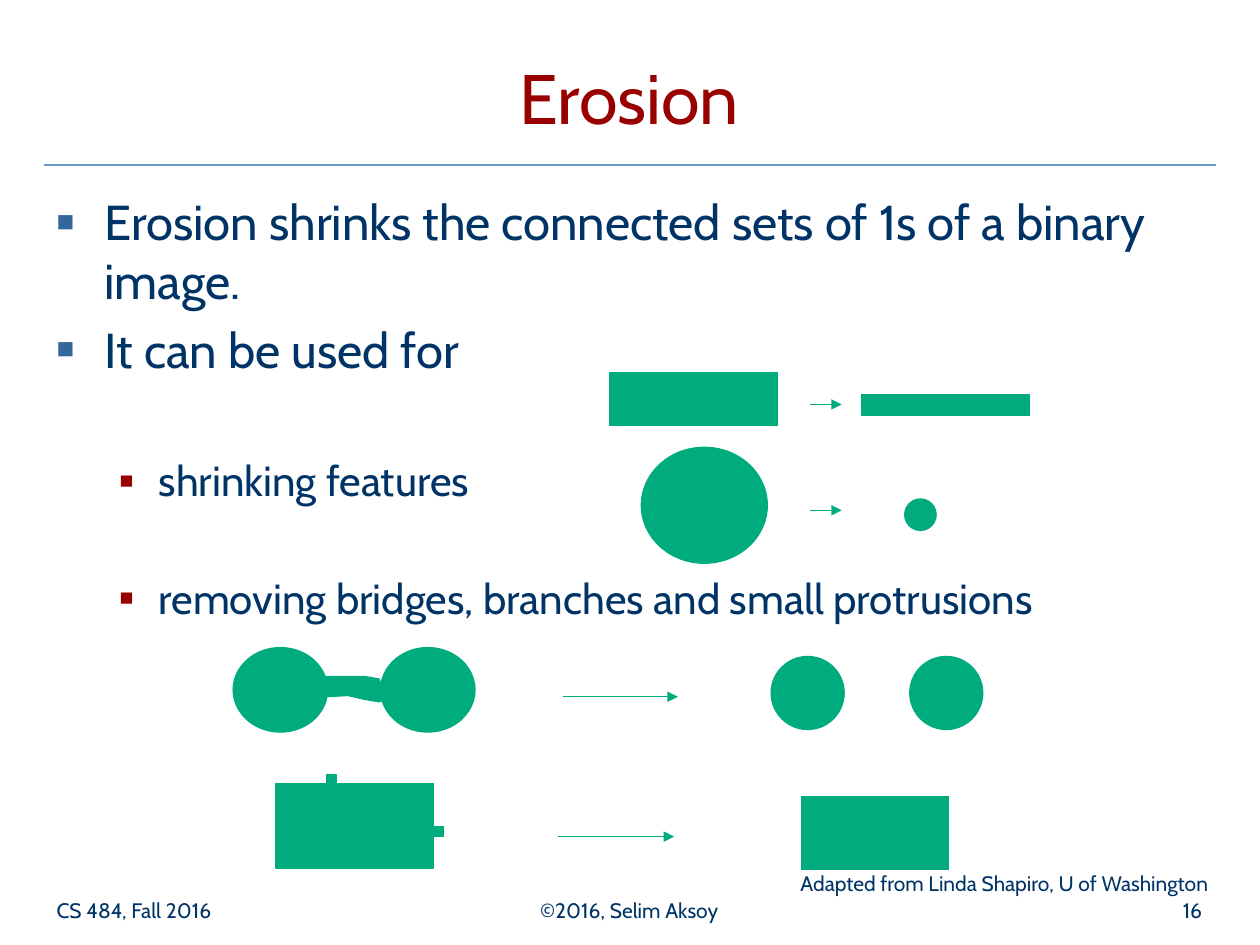
from dataclasses import dataclass

from lxml import etree
from pptx import Presentation
from pptx.dml.color import RGBColor
from pptx.enum.shapes import MSO_CONNECTOR, MSO_SHAPE
from pptx.enum.text import MSO_ANCHOR, MSO_AUTO_SIZE, PP_ALIGN
from pptx.oxml.ns import qn
from pptx.util import Pt

PX = 9144
FONT = "Cabin"
COLORS = {
    "text": "003366",
    "title": "990000",
    "bullet": "336699",
    "sub_bullet": "990000",
    "rule": "6699CC",
    "figure": "00AB7E",
}
RECT, ELLIPSE = MSO_SHAPE.RECTANGLE, MSO_SHAPE.OVAL
STRAIGHT = MSO_CONNECTOR.STRAIGHT
LEFT, CENTER, RIGHT = PP_ALIGN.LEFT, PP_ALIGN.CENTER, PP_ALIGN.RIGHT
TOP, BOTTOM = MSO_ANCHOR.TOP, MSO_ANCHOR.BOTTOM
NO_FIT = MSO_AUTO_SIZE.NONE


@dataclass
class Box:
    left: int
    top: int
    width: int
    height: int

    def emu(self) -> tuple[int, int, int, int]:
        return self.left * PX, self.top * PX, self.width * PX, self.height * PX


@dataclass
class Figure:
    preset: MSO_SHAPE
    box: Box


@dataclass
class Arrow:
    left: int
    y: int
    length: int


@dataclass
class Caption:
    text: str
    box: Box
    align: PP_ALIGN
    anchor: MSO_ANCHOR


@dataclass
class Bullet:
    text: str
    level: int
    before: float


@dataclass
class BulletStyle:
    size: int
    margin: int
    hang: int
    color: str
    percent: int


BULLET_STYLES = [
    BulletStyle(28, 38, 38, "bullet", 60),
    BulletStyle(24, 81, 31, "sub_bullet", 55),
]
BULLETS = [
    Bullet("Erosion shrinks the connected sets of 1s of a binary image.", 0, 0),
    Bullet("It can be used for", 0, 5.6),
    Bullet("shrinking features", 1, 44),
    Bullet("removing bridges, branches and small protrusions", 1, 38.5),
]
CAPTIONS = [
    Caption("CS 484, Fall 2016", Box(35, 702, 208, 35), LEFT, BOTTOM),
    Caption("©2016, Selim Aksoy", Box(341, 702, 317, 35), CENTER, BOTTOM),
    Caption("16", Box(756, 702, 208, 35), RIGHT, BOTTOM),
    Caption("Adapted from Linda Shapiro, U of Washington",
            Box(594, 686, 375, 30), RIGHT, TOP),
]
FIGURES = [
    Figure(RECT, Box(484, 296, 133, 42)),
    Figure(RECT, Box(684, 313, 133, 17)),
    Figure(ELLIPSE, Box(509, 355, 100, 92)),
    Figure(ELLIPSE, Box(718, 396, 25, 25)),
    Figure(ELLIPSE, Box(185, 514, 75, 67)),
    Figure(ELLIPSE, Box(302, 514, 75, 67)),
    Figure(ELLIPSE, Box(612, 521, 58, 58)),
    Figure(ELLIPSE, Box(722, 521, 58, 58)),
    Figure(RECT, Box(219, 622, 125, 67)),
    Figure(RECT, Box(344, 656, 8, 8)),
    Figure(RECT, Box(259, 615, 8, 8)),
    Figure(RECT, Box(636, 632, 117, 58)),
]
ARROWS = [Arrow(643, 321, 25), Arrow(643, 405, 25),
          Arrow(447, 553, 91), Arrow(443, 664, 92)]
BRIDGE = [(249, 537), (275, 537), (290, 537), (301, 539), (303, 546), (304, 556),
          (301, 557), (289, 555), (276, 552), (259, 553), (252, 555), (252, 547)]


def rgb(name: str) -> RGBColor:
    return RGBColor.from_string(COLORS[name])


def add_run(paragraph, text: str, size: int, color: str) -> None:
    run = paragraph.add_run()
    run.text = text
    run.font.name = FONT
    run.font.size = Pt(size)
    run.font.color.rgb = rgb(color)


def place(shape, box: Box) -> None:
    shape.left, shape.top, shape.width, shape.height = box.emu()


def set_frame(shape, anchor: MSO_ANCHOR):
    frame = shape.text_frame
    frame.word_wrap = True
    frame.auto_size = NO_FIT
    frame.vertical_anchor = anchor
    return frame


def set_bullet(paragraph, style: BulletStyle) -> None:
    props = paragraph._p.get_or_add_pPr()
    props.set("marL", str(style.margin * PX))
    props.set("indent", str(-style.hang * PX))
    color = etree.SubElement(props, qn("a:buClr"))
    etree.SubElement(color, qn("a:srgbClr"), val=COLORS[style.color])
    etree.SubElement(props, qn("a:buSzPct"), val=str(style.percent * 1000))
    etree.SubElement(props, qn("a:buChar"), char="■")


def fill_title(title) -> None:
    place(title, Box(35, 21, 929, 94))
    paragraph = set_frame(title, BOTTOM).paragraphs[0]
    paragraph.alignment = CENTER
    add_run(paragraph, "Erosion", 40, "title")


def fill_body(body) -> None:
    place(body, Box(35, 147, 929, 543))
    frame = set_frame(body, TOP)
    for index, bullet in enumerate(BULLETS):
        paragraph = frame.add_paragraph() if index else frame.paragraphs[0]
        style = BULLET_STYLES[bullet.level]
        paragraph.level = bullet.level
        paragraph.space_before = Pt(bullet.before)
        set_bullet(paragraph, style)
        add_run(paragraph, bullet.text, style.size, "text")


def add_caption(shapes, caption: Caption) -> None:
    frame = set_frame(shapes.add_textbox(*caption.box.emu()), caption.anchor)
    paragraph = frame.paragraphs[0]
    paragraph.alignment = caption.align
    add_run(paragraph, caption.text, 12, "text")


def paint(shape) -> None:
    shape.shadow.inherit = False
    shape.fill.solid()
    shape.fill.fore_color.rgb = rgb("figure")
    shape.line.color.rgb = rgb("figure")
    shape.line.width = Pt(0.75)


def add_line(shapes, left: int, y: int, length: int, color: str):
    line = shapes.add_connector(STRAIGHT, left * PX, y * PX, (left + length) * PX, y * PX)
    line.line.color.rgb = rgb(color)
    line.line.width = Pt(0.75)
    etree.SubElement(line._element.spPr, qn("a:effectLst"))
    return line


def add_arrow(shapes, arrow: Arrow) -> None:
    line = add_line(shapes, arrow.left, arrow.y, arrow.length, "figure")
    etree.SubElement(line.line._get_or_add_ln(), qn("a:tailEnd"), type="triangle")


def main() -> None:
    deck = Presentation()
    deck.slide_width, deck.slide_height = 1000 * PX, 750 * PX
    slide = deck.slides.add_slide(deck.slide_layouts[1])
    shapes = slide.shapes
    fill_title(shapes.title)
    fill_body(slide.placeholders[1])
    add_line(shapes, 35, 131, 930, "rule")
    for figure in FIGURES:
        paint(shapes.add_shape(figure.preset, *figure.box.emu()))
    bridge = shapes.build_freeform(*BRIDGE[0], scale=PX)
    bridge.add_line_segments(BRIDGE[1:], close=True)
    paint(bridge.convert_to_shape())
    for arrow in ARROWS:
        add_arrow(shapes, arrow)
    for caption in CAPTIONS:
        add_caption(shapes, caption)
    deck.save("out.pptx")


if __name__ == "__main__":
    main()
